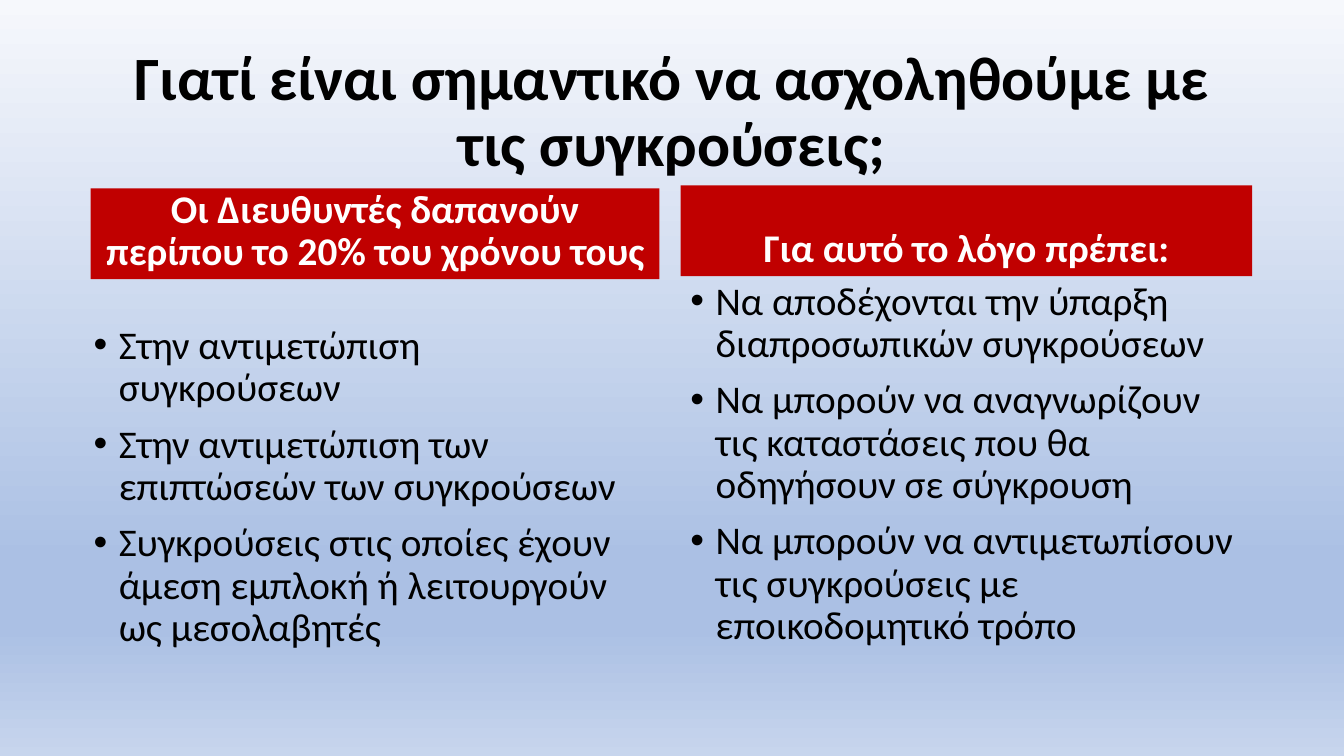
from lxml.etree import SubElement
from pptx import Presentation
from pptx.dml.color import RGBColor
from pptx.enum.shapes import MSO_SHAPE as Shape
from pptx.enum.text import MSO_ANCHOR as Anchor, PP_ALIGN as Align
from pptx.oxml.ns import qn
from pptx.util import Inches, Pt

FONT = "Calibri"
BLACK, WHITE, RED = "000000", "FFFFFF", "C00000"
SKY = [(0, "F6F8FC"), (74, "ABC0E4"), (83, "ABC0E4"), (100, "C7D5ED")]

TITLE = "Γιατί είναι σημαντικό να ασχοληθούμε με τις συγκρούσεις;"
COLUMNS = [
    ((0.9, 1.87, 5.64, 0.9), "Οι Διευθυντές δαπανούν περίπου το 20% του χρόνου τους",
     (0.83, 3.18, 5.64, 4.03), [
        "Στην αντιμετώπιση συγκρούσεων",
        "Στην αντιμετώπιση των επιπτώσεών των συγκρούσεων",
        "Συγκρούσεις στις οποίες έχουν άμεση εμπλοκή ή λειτουργούν ως μεσολαβητές"]),
    ((6.75, 1.84, 5.67, 0.9), "Για αυτό το λόγο πρέπει:",
     (6.75, 2.74, 5.67, 4.03), [
        "Να αποδέχονται την ύπαρξη διαπροσωπικών συγκρούσεων",
        "Να μπορούν να αναγνωρίζουν τις καταστάσεις που θα οδηγήσουν σε σύγκρουση",
        "Να μπορούν να αντιμετωπίσουν τις συγκρούσεις με εποικοδομητικό τρόπο"]),
]


def color(value):
    """Turn a hex string into a colour."""
    return RGBColor.from_string(value)


def paint_background(page, stops):
    """Fill the page with a vertical gradient."""
    page.background.fill.gradient()
    gradient = page.background.fill._fill._gradFill
    stop_list = gradient.find(qn("a:gsLst"))
    for stop in list(stop_list):
        stop_list.remove(stop)
    for percent, value in stops:
        stop = SubElement(stop_list, qn("a:gs"), pos=str(percent * 1000))
        SubElement(stop, qn("a:srgbClr"), val=value)
    gradient.find(qn("a:lin")).set("ang", str(90 * 60000))


def add_bullet(para):
    """Give the paragraph a hanging round bullet."""
    properties = para._p.get_or_add_pPr()
    indent = Inches(0.25)
    properties.set("marL", str(indent))
    properties.set("indent", str(-indent))
    SubElement(properties, qn("a:buFont"), typeface="Arial")
    SubElement(properties, qn("a:buChar"), char="•")


def write(frame, lines, size, value, bold=False, before=0, align=Align.LEFT,
          anchor=Anchor.TOP, bullets=False):
    """Write one paragraph per line into the text frame."""
    frame.word_wrap = True
    frame.vertical_anchor = anchor
    for index, line in enumerate(lines):
        para = frame.add_paragraph() if index else frame.paragraphs[0]
        para.alignment = align
        para.line_spacing = 0.9
        para.space_before = Pt(before)
        if bullets:
            add_bullet(para)
        span = para.add_run()
        span.text = line
        span.font.name = FONT
        span.font.size = Pt(size)
        span.font.bold = bold
        span.font.color.rgb = color(value)


def add_title(page, box, text):
    """Place the centred slide title."""
    title = page.shapes.add_textbox(*map(Inches, box))
    write(title.text_frame, [text], 44, BLACK, bold=True,
          align=Align.CENTER, anchor=Anchor.MIDDLE)


def add_header(page, box, text):
    """Place a red column header."""
    header = page.shapes.add_shape(Shape.RECTANGLE, *map(Inches, box))
    header.shadow.inherit = False
    header.fill.solid()
    header.fill.fore_color.rgb = color(RED)
    header.line.fill.background()
    write(header.text_frame, [text], 28, WHITE, bold=True, before=10,
          align=Align.CENTER, anchor=Anchor.BOTTOM)


def add_points(page, box, points):
    """Place a bulleted list."""
    body = page.shapes.add_textbox(*map(Inches, box))
    write(body.text_frame, points, 28, BLACK, before=10, bullets=True)


def main():
    """Build and save the deck."""
    deck = Presentation()
    deck.slide_width, deck.slide_height = Inches(13.33), Inches(7.5)
    page = deck.slides.add_slide(deck.slide_layouts[6])
    paint_background(page, SKY)
    add_title(page, (0.92, 0.4, 11.5, 1.45), TITLE)
    for header_box, header, points_box, points in COLUMNS:
        add_header(page, header_box, header)
        add_points(page, points_box, points)
    deck.save("out.pptx")


if __name__ == "__main__":
    main()
